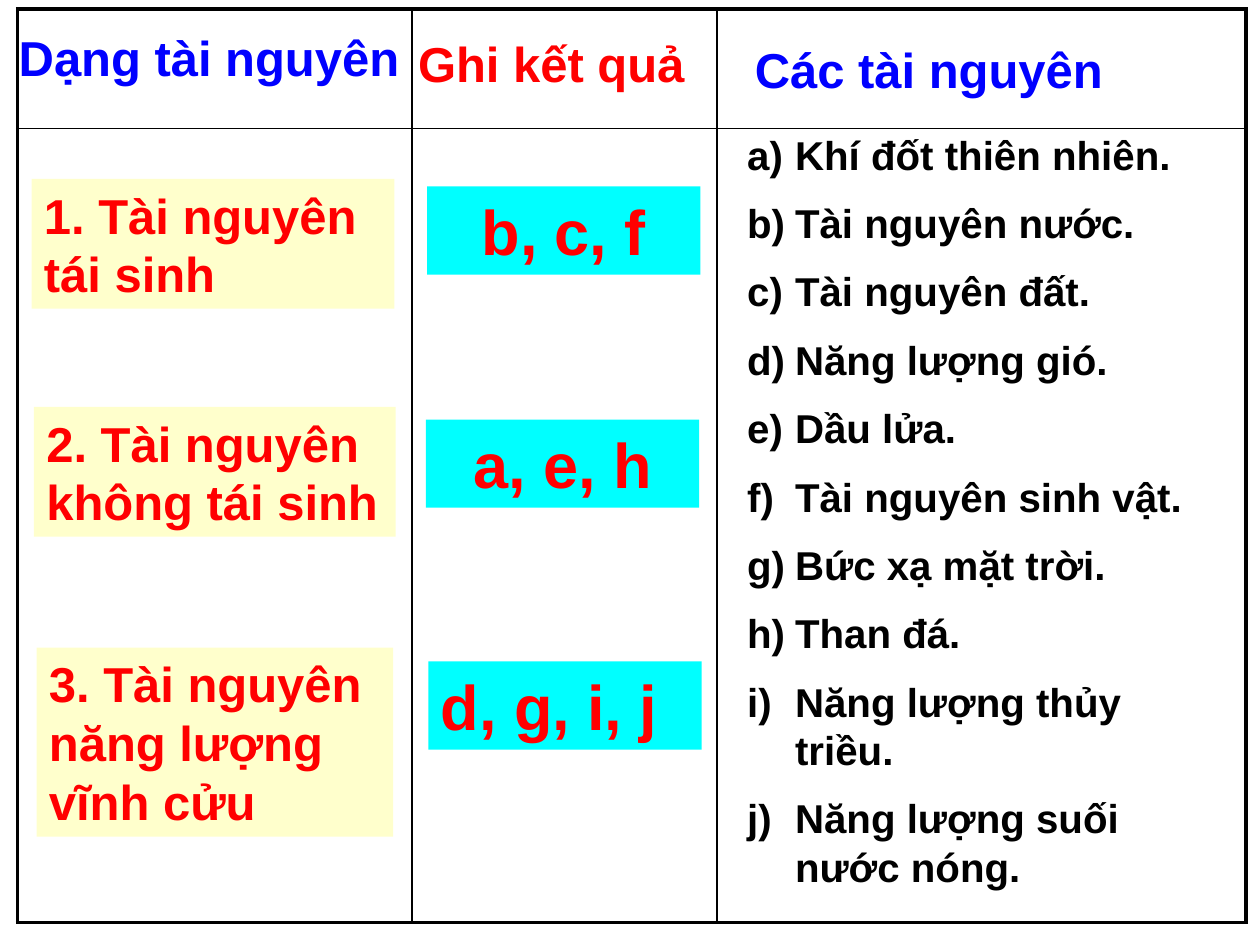
from pptx import Presentation
from pptx.dml.color import RGBColor as RGB
from pptx.enum.shapes import MSO_SHAPE as Shape
from pptx.enum.text import MSO_ANCHOR as Anchor, MSO_AUTO_SIZE as Fit, PP_ALIGN as Align
from pptx.oxml.ns import qn
from pptx.util import Inches, Pt
from lxml.etree import SubElement

THEME = {
    "font": "Arial", "blue": "0000FF", "red": "FF0000", "black": "000000",
    "cream": "FFFFCC", "cyan": "00FFFF",
    "label": 28, "list": 23, "answer": 36, "outer": 2.25, "inner": 1,
}

prs = Presentation()
prs.slide_width, prs.slide_height = Inches(10), Inches(7.5)
UNIT = prs.slide_width // 10
s = prs.slides.add_slide(prs.slide_layouts[1])


def place(sp, *box):
    sp.left, sp.top, sp.width, sp.height = [int(v * UNIT) for v in box]


def write(sp, lines, size, color, align=Align.LEFT, numbered=False):
    tf = sp.text_frame
    tf.word_wrap, tf.auto_size, tf.vertical_anchor = True, Fit.NONE, Anchor.TOP
    for i, line in enumerate(lines):
        p = tf.paragraphs[0] if i == 0 else tf.add_paragraph()
        if numbered:
            pPr = p._p.get_or_add_pPr()
            pPr.set("marL", str(int(0.38 * UNIT)))
            pPr.set("indent", str(int(-0.38 * UNIT)))
            SubElement(pPr, qn("a:buFont"), typeface="+mj-lt")
            SubElement(pPr, qn("a:buAutoNum"), type="alphaLcParenR")
        p.alignment = align
        p.space_before = Pt(THEME[size] / 2 if i else 0)
        r = p.add_run()
        r.text = line
        r.font.name, r.font.size, r.font.bold = THEME["font"], Pt(THEME[size]), True
        r.font.color.rgb = RGB.from_string(THEME[color])


title, body = s.shapes.title, s.placeholders[1]
place(title, 5.89, 0.26, 3.56, 0.57)
write(title, ["Các tài nguyên"], "label", "blue")
place(body, 5.83, 0.98, 3.92, 6.44)
write(body, [
    "Khí đốt thiên nhiên.", "Tài nguyên nước.", "Tài nguyên đất.",
    "Năng lượng gió.", "Dầu lửa.", "Tài nguyên sinh vật.",
    "Bức xạ mặt trời.", "Than đá.", "Năng lượng thủy triều.",
    "Năng lượng suối nước nóng.",
], "list", "black", numbered=True)

cols, rows = [3.13, 2.42, 4.2], [0.95, 6.3]
frame = s.shapes.add_table(len(rows), len(cols), 0, 0, UNIT, UNIT)
place(frame, 0.14, 0.07, sum(cols), sum(rows))
table = frame.table
table.first_row = table.horz_banding = False
for col, w in zip(table.columns, cols):
    col.width = int(w * UNIT)
for row, h in zip(table.rows, rows):
    row.height = int(h * UNIT)
for i in range(len(rows)):
    for j in range(len(cols)):
        cell = table.cell(i, j)
        tcPr = cell._tc.get_or_add_tcPr()
        edges = {"L": j == 0, "R": j == len(cols) - 1, "T": i == 0, "B": i == len(rows) - 1}
        for side, outer in edges.items():
            width = Pt(THEME["outer" if outer else "inner"])
            ln = SubElement(tcPr, qn(f"a:ln{side}"), w=str(width))
            SubElement(SubElement(ln, qn("a:solidFill")), qn("a:srgbClr"), val=THEME["black"])
        cell.fill.background()

for text, color, box in [
    ("Dạng tài nguyên", "blue", (0.05, 0.17, 3.48, 0.57)),
    ("Ghi kết quả", "red", (3.22, 0.22, 2.33, 0.57)),
]:
    sp = s.shapes.add_textbox(0, 0, UNIT, UNIT)
    place(sp, *box)
    write(sp, [text], "label", color)

for text, fill, size, align, box in [
    ("1. Tài nguyên tái sinh", "cream", "label", Align.LEFT, (0.25, 1.42, 2.88, 1.03)),
    ("2. Tài nguyên không tái sinh", "cream", "label", Align.LEFT, (0.27, 3.23, 2.87, 1.03)),
    ("3. Tài nguyên năng lượng vĩnh cửu", "cream", "label", Align.LEFT, (0.29, 5.14, 2.83, 1.5)),
    ("b, c, f", "cyan", "answer", Align.CENTER, (3.39, 1.48, 2.17, 0.7)),
    ("a, e, h", "cyan", "answer", Align.CENTER, (3.38, 3.33, 2.17, 0.7)),
    ("d, g, i, j", "cyan", "answer", Align.LEFT, (3.4, 5.25, 2.17, 0.7)),
]:
    sp = s.shapes.add_shape(Shape.RECTANGLE, 0, 0, UNIT, UNIT)
    place(sp, *box)
    sp.shadow.inherit = False
    sp.fill.solid()
    sp.fill.fore_color.rgb = RGB.from_string(THEME[fill])
    sp.line.fill.background()
    write(sp, [text], size, "red", align)

prs.save("out.pptx")
